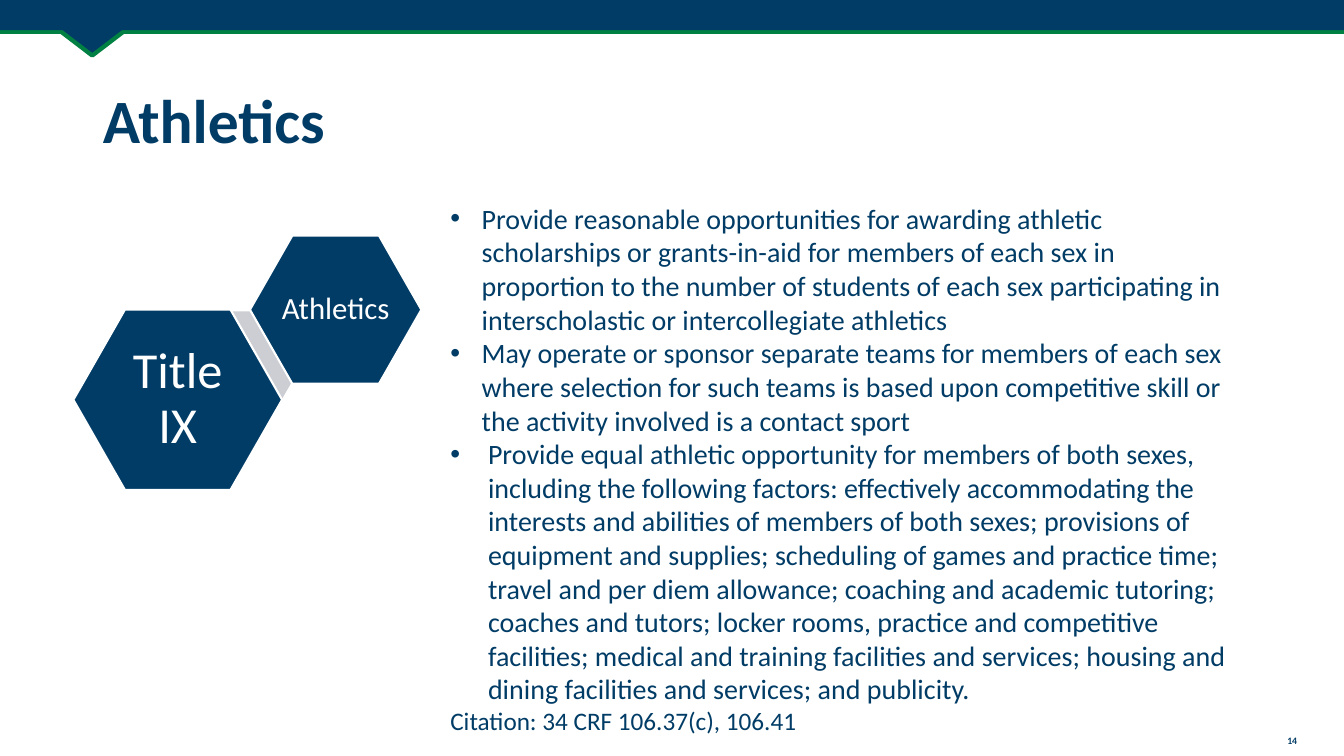
from lxml import etree
from pptx import Presentation
from pptx.dml.color import RGBColor
from pptx.enum.shapes import MSO_CONNECTOR, MSO_SHAPE
from pptx.enum.text import MSO_ANCHOR, MSO_AUTO_SIZE, PP_ALIGN
from pptx.oxml.ns import qn
from pptx.util import Cm, Pt

STRAIGHT = MSO_CONNECTOR.STRAIGHT
HEXAGON, TRIANGLE, RECTANGLE = MSO_SHAPE.HEXAGON, MSO_SHAPE.ISOSCELES_TRIANGLE, MSO_SHAPE.RECTANGLE
MIDDLE = MSO_ANCHOR.MIDDLE
LEFT, CENTER = PP_ALIGN.LEFT, PP_ALIGN.CENTER
NO_AUTOFIT = MSO_AUTO_SIZE.NONE

COLORS = {"navy": "003C66", "green": "008042", "gray": "CCCED3", "white": "FFFFFF"}
FONT = "Calibri"
SLIDE_WIDTH = Cm(33.87)


def add_solid(kind, left, top, width, height, fill, line=None, line_width=0):
    """Add a flat preset shape, measured in centimetres, without shadow."""
    solid = slide.shapes.add_shape(kind, Cm(left), Cm(top), Cm(width), Cm(height))
    solid.shadow.inherit = False
    solid.fill.solid()
    solid.fill.fore_color.rgb = RGBColor.from_string(COLORS[fill])
    if line:
        solid.line.color.rgb = RGBColor.from_string(COLORS[line])
        solid.line.width = Pt(line_width)
    else:
        solid.line.fill.background()
    return solid


def add_run(paragraph, text, size, color="navy", bold=False):
    run = paragraph.add_run()
    run.text = text
    run.font.name = FONT
    run.font.size = Pt(size)
    run.font.bold = bold
    run.font.color.rgb = RGBColor.from_string(COLORS[color])


prs = Presentation()
prs.slide_width, prs.slide_height = SLIDE_WIDTH, Cm(19.05)
slide = prs.slides.add_slide(prs.slide_layouts[5])

# Header band with its pointer
band_edge = slide.shapes.add_connector(STRAIGHT, 0, Cm(0.81), SLIDE_WIDTH, Cm(0.81))
band_edge.line.color.rgb = RGBColor.from_string(COLORS["green"])
band_edge.line.width = Pt(3)
etree.SubElement(band_edge._element.spPr, qn("a:effectLst"))
pointer = add_solid(TRIANGLE, 0.99, 0.38, 2.67, 1.02, "navy", "green", 3)
pointer.rotation = 180
add_solid(RECTANGLE, 0, 0, 33.87, 0.76, "navy")

# Slide number
number = slide.shapes.add_textbox(Cm(31.93), Cm(18.39), Cm(1.27), Cm(0.56)).text_frame
number.word_wrap = True
number.paragraphs[0].alignment = CENTER
add_run(number.paragraphs[0], "14", 7, bold=True)

# Title
title = slide.shapes.title
title.left, title.top, title.width, title.height = Cm(2.34), Cm(1.27), Cm(29.21), Cm(3.68)
title.text_frame.auto_size = NO_AUTOFIT
title.text_frame.vertical_anchor = MIDDLE
heading = title.text_frame.paragraphs[0]
heading.alignment = LEFT
heading.line_spacing = 0.9
add_run(heading, "Athletics", 44, bold=True)

# Hexagon diagram: gray link behind the two topics
link = add_solid(HEXAGON, 3.33, 7.85, 4.04, 3.5, "gray")
link.adjustments[0] = 0.289
topics = [
    ("Title IX", 36, 1.85, 7.8, 5.26, 4.55, 0.13),
    ("Athletics", 22, 6.3, 5.94, 4.32, 3.73, 0.08),
]
for label, size, left, top, width, height, inset in topics:
    topic = add_solid(HEXAGON, left, top, width, height, "navy", "white", 1.5)
    topic.adjustments[0] = 0.286
    frame = topic.text_frame
    frame.word_wrap = True
    frame.vertical_anchor = MIDDLE
    frame.margin_left = frame.margin_right = Cm(inset)
    frame.margin_top = frame.margin_bottom = Cm(inset)
    frame.paragraphs[0].alignment = CENTER
    frame.paragraphs[0].line_spacing = 0.9
    add_run(frame.paragraphs[0], label, size, "white")

# Requirements, each with its hanging indent in centimetres
requirements = [
    (0.79, "Provide reasonable opportunities for awarding athletic scholarships or "
     "grants-in-aid for members of each sex in proportion to the number of students of "
     "each sex participating in interscholastic or intercollegiate athletics"),
    (0.95, "May operate or sponsor separate teams for members of each sex where selection "
     "for such teams is based upon competitive skill or the activity involved is a "
     "contact sport"),
    (0.95, "Provide equal athletic opportunity for members of both sexes, including the "
     "following factors: effectively accommodating the interests and abilities of members "
     "of both sexes; provisions of equipment and supplies; scheduling of games and "
     "practice time; travel and per diem allowance; coaching and academic tutoring; "
     "coaches and tutors; locker rooms, practice and competitive facilities; medical and "
     "training facilities and services; housing and dining facilities and services; and "
     "publicity."),
]
requirements[1] = (0.79, requirements[1][1])
body = slide.shapes.add_textbox(Cm(11.1), Cm(4.95), Cm(20.45), Cm(13.84)).text_frame
body.word_wrap = True
paragraph = body.paragraphs[0]
for indent, requirement in requirements:
    properties = paragraph._p.get_or_add_pPr()
    properties.set("marL", str(Cm(indent)))
    properties.set("indent", str(-Cm(indent)))
    etree.SubElement(properties, qn("a:buFont"), typeface="Arial")
    etree.SubElement(properties, qn("a:buChar"), char="•")
    add_run(paragraph, requirement, 20)
    paragraph = body.add_paragraph()
add_run(paragraph, "Citation: 34 CRF 106.37(c), 106.41", 18)

prs.save("out.pptx")
